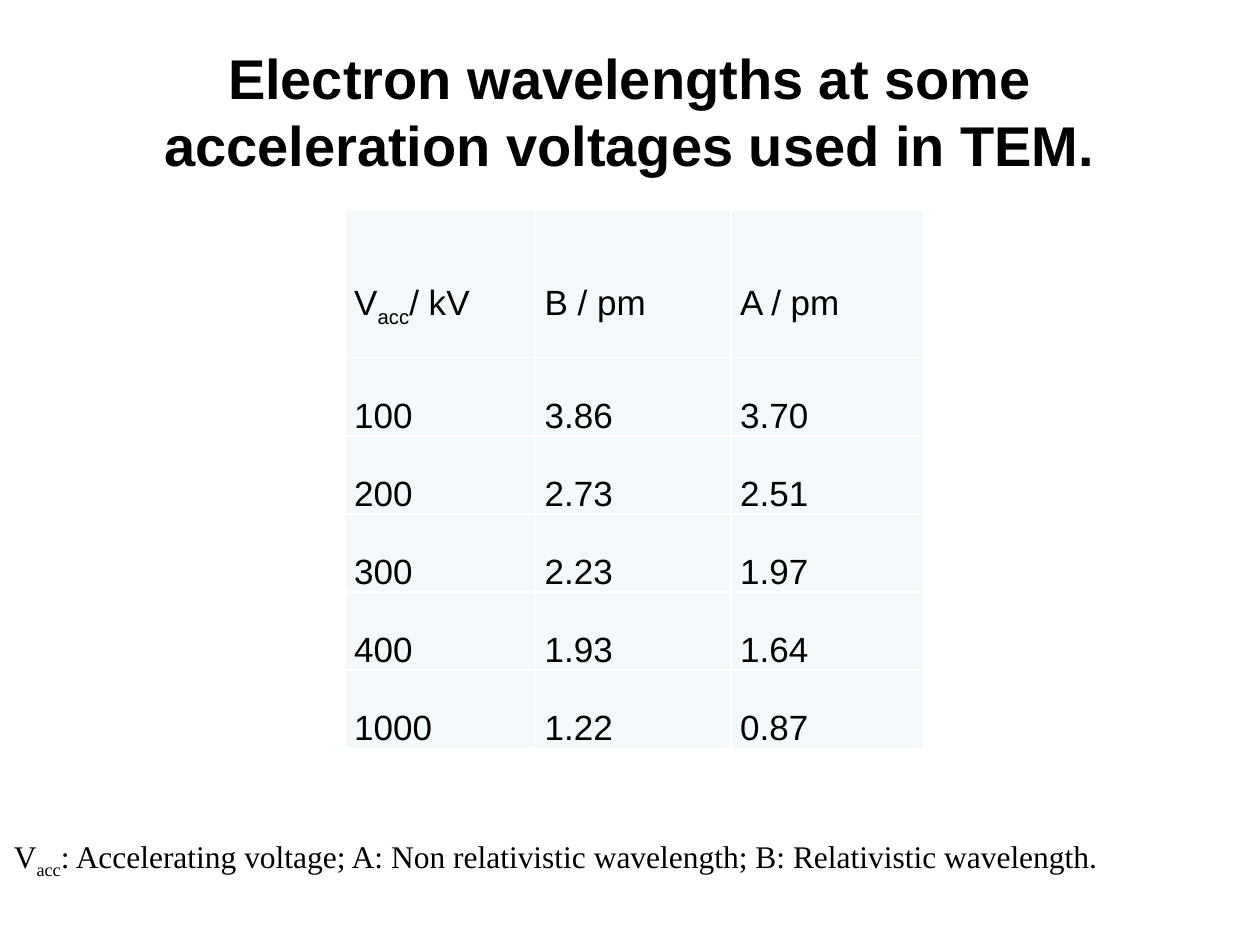
import pptx
import pptx.dml.color
import pptx.enum.text
import pptx.oxml
import pptx.oxml.ns
import pptx.util
from pptx.util import Cm

COLORS = {"text": "000000", "cell": "F3F9FA", "border": "FFFFFF"}
COLUMN_WIDTHS = [3.84, 3.94, 3.88]
HEADER_HEIGHT, ROW_HEIGHT = 2.97, 1.57
HEADER = [["V", "acc", "/ kV"], ["B / pm"], ["A / pm"]]
WAVELENGTHS = [
    ("100", "3.86", "3.70"),
    ("200", "2.73", "2.51"),
    ("300", "2.23", "1.97"),
    ("400", "1.93", "1.64"),
    ("1000", "1.22", "0.87"),
]


def rgb(name):
    return pptx.dml.color.RGBColor.from_string(COLORS[name])


def write(para, parts, font, size, bold=False):
    """Fill a paragraph with text parts, every second one a subscript."""
    for index, part in enumerate(parts):
        span = para.add_run()
        span.text = part
        if index % 2:
            span._r.get_or_add_rPr().set("baseline", "-25000")
    para.font.name = font
    para.font.size = pptx.util.Pt(size)
    para.font.bold = bold
    para.font.color.rgb = rgb("text")


def add_borders(cell):
    properties = cell._tc.get_or_add_tcPr()
    for side in ("lnL", "lnR", "lnT", "lnB"):
        properties.append(pptx.oxml.parse_xml(
            f'<a:{side} {pptx.oxml.ns.nsdecls("a")} w="12700"><a:solidFill>'
            f'<a:srgbClr val="{COLORS["border"]}"/></a:solidFill></a:{side}>'))


def place_title(page, left, top, width, height):
    title = page.shapes.title
    title.left, title.top = Cm(left), Cm(top)
    title.width, title.height = Cm(width), Cm(height)
    title.text_frame.vertical_anchor = pptx.enum.text.MSO_ANCHOR.MIDDLE
    para = title.text_frame.paragraphs[0]
    para.alignment = pptx.enum.text.PP_ALIGN.CENTER
    write(para, ["Electron wavelengths at some acceleration voltages used in TEM."],
          "Arial", 32, bold=True)


def fill_cell(cell, parts):
    add_borders(cell)
    cell.fill.solid()
    cell.fill.fore_color.rgb = rgb("cell")
    cell.margin_left = cell.margin_right = Cm(0.18)
    cell.margin_top = cell.margin_bottom = 0
    cell.vertical_anchor = pptx.enum.text.MSO_ANCHOR.MIDDLE
    para = cell.text_frame.paragraphs[0]
    para.line_spacing = 2.0
    write(para, parts, "Arial", 20)
    return para


def place_table(page, left, top):
    heights = [HEADER_HEIGHT] + [ROW_HEIGHT] * len(WAVELENGTHS)
    table = page.shapes.add_table(
        len(heights), len(COLUMN_WIDTHS), Cm(left), Cm(top),
        Cm(sum(COLUMN_WIDTHS)), Cm(sum(heights))).table
    for column, width in zip(table.columns, COLUMN_WIDTHS):
        column.width = Cm(width)
    for row, height in zip(table.rows, heights):
        row.height = Cm(height)
    for index, parts in enumerate(HEADER):
        fill_cell(table.cell(0, index), parts).space_after = pptx.util.Pt(16)
    for row, values in enumerate(WAVELENGTHS, start=1):
        for column, value in enumerate(values):
            fill_cell(table.cell(row, column), [value])


def place_legend(page, left, top, width, height):
    box = page.shapes.add_textbox(Cm(left), Cm(top), Cm(width), Cm(height))
    box.text_frame.word_wrap = True
    box.text_frame.auto_size = pptx.enum.text.MSO_AUTO_SIZE.SHAPE_TO_FIT_TEXT
    para = box.text_frame.paragraphs[0]
    para.alignment = pptx.enum.text.PP_ALIGN.JUSTIFY
    para.line_spacing = 2.0
    write(para, ["V", "acc", ": Accelerating voltage; A: Non relativistic wavelength; "
                 "B: Relativistic wavelength."], "Times New Roman", 18)


def main():
    deck = pptx.Presentation()
    deck.slide_width, deck.slide_height = Cm(25.4), Cm(19.05)
    page = deck.slides.add_slide(deck.slide_layouts[5])
    place_title(page, 1.27, 0.64, 22.86, 3.18)
    place_table(page, 6.96, 4.24)
    place_legend(page, 0.03, 15.88, 25.58, 1.8)
    deck.save("out.pptx")


if __name__ == "__main__":
    main()
